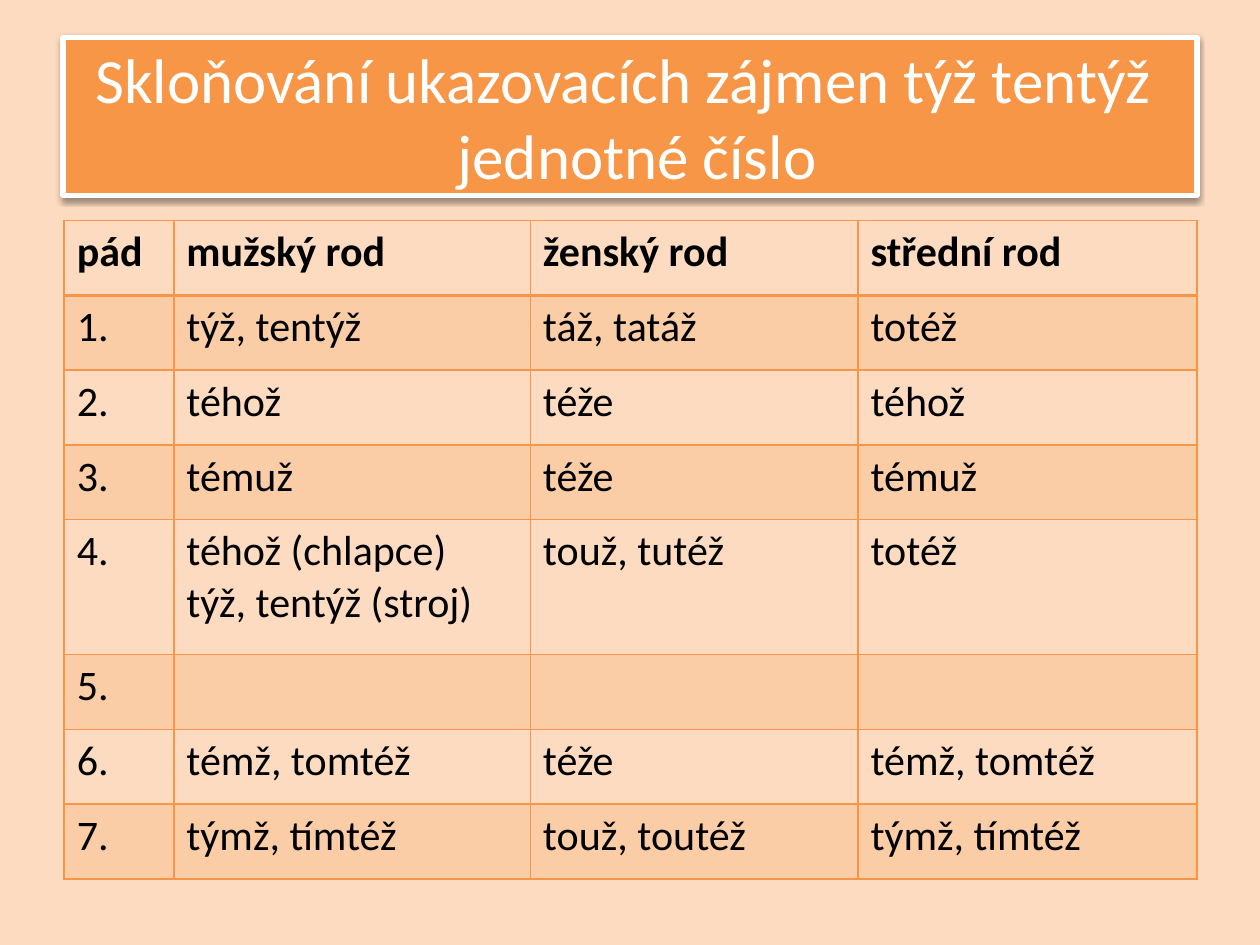
from dataclasses import dataclass

from lxml.etree import SubElement
from pptx import Presentation
from pptx.dml.color import RGBColor
from pptx.enum.text import MSO_ANCHOR, MSO_AUTO_SIZE, PP_ALIGN
from pptx.oxml.ns import qn
from pptx.util import Inches, Pt


@dataclass(frozen=True)
class Theme:
    font: str = "Calibri"
    title_size: int = 36
    table_size: int = 24
    background: str = "FCDBC0"
    accent: str = "F79646"
    light: str = "FFFFFF"
    dark: str = "000000"
    band_alpha: int = 20
    shadow_alpha: int = 38
    frame_width: float = 3
    border_width: float = 1
    header_border_width: float = 2


def add_color(parent, color, alpha=100):
    element = SubElement(parent, qn("a:srgbClr"), val=color)
    SubElement(element, qn("a:alpha"), val=str(alpha * 1000))


class SlideBuilder:
    GRID_COLUMNS = 100
    GRID_ROWS = 75

    def __init__(self, presentation, theme):
        self.theme = theme
        self.column = presentation.slide_width / self.GRID_COLUMNS
        self.row = presentation.slide_height / self.GRID_ROWS
        self.slide = presentation.slides.add_slide(presentation.slide_layouts[5])
        fill = self.slide.background.fill
        fill.solid()
        fill.fore_color.rgb = RGBColor.from_string(theme.background)

    def across(self, columns):
        return round(columns * self.column)

    def down(self, rows):
        return round(rows * self.row)

    def format_text(self, text_frame, size, color, bold=False):
        for paragraph in text_frame.paragraphs:
            for run in paragraph.runs:
                run.font.name = self.theme.font
                run.font.size = Pt(size)
                run.font.bold = bold
                run.font.color.rgb = RGBColor.from_string(color)

    def add_title(self, text, left, top, width, height):
        shape = self.slide.shapes.title
        shape.left, shape.top = self.across(left), self.down(top)
        shape.width, shape.height = self.across(width), self.down(height)
        shape.fill.solid()
        shape.fill.fore_color.rgb = RGBColor.from_string(self.theme.accent)
        shape.line.color.rgb = RGBColor.from_string(self.theme.light)
        shape.line.width = Pt(self.theme.frame_width)
        self.add_shadow(shape)
        text_frame = shape.text_frame
        text_frame.text = text
        text_frame.word_wrap = True
        text_frame.auto_size = MSO_AUTO_SIZE.NONE
        text_frame.vertical_anchor = MSO_ANCHOR.MIDDLE
        text_frame.paragraphs[0].alignment = PP_ALIGN.CENTER
        self.format_text(text_frame, self.theme.title_size, self.theme.light)

    def add_shadow(self, shape):
        effects = SubElement(shape.element.spPr, qn("a:effectLst"))
        shadow = SubElement(effects, qn("a:outerShdw"), blurRad=str(Pt(3.1)),
                            dist=str(Pt(1.6)), dir="5400000", rotWithShape="0")
        add_color(shadow, self.theme.dark, self.theme.shadow_alpha)

    def add_table(self, rows, left, top, widths, heights):
        frame = self.slide.shapes.add_table(
            len(rows), len(widths), self.across(left), self.down(top),
            self.across(sum(widths)), self.down(sum(heights)))
        table = frame.table
        table.horz_banding = False
        for column, width in zip(table.columns, widths):
            column.width = self.across(width)
        for row, height in zip(table.rows, heights):
            row.height = self.down(height)
        for row_index, row in enumerate(rows):
            for column_index, text in enumerate(row):
                cell = table.cell(row_index, column_index)
                cell.text_frame.text = text
                self.format_text(cell.text_frame, self.theme.table_size,
                                 self.theme.dark, bold=row_index == 0)
                self.style_cell(cell, row_index)

    def style_cell(self, cell, row_index):
        thin, thick = self.theme.border_width, self.theme.header_border_width
        widths = {
            "a:lnL": thin,
            "a:lnR": thin,
            "a:lnT": thick if row_index == 1 else thin,
            "a:lnB": thick if row_index == 0 else thin,
        }
        properties = cell._tc.get_or_add_tcPr()
        for side, width in widths.items():
            border = SubElement(properties, qn(side), w=str(Pt(width)))
            add_color(SubElement(border, qn("a:solidFill")), self.theme.accent)
        if row_index % 2:
            add_color(SubElement(properties, qn("a:solidFill")),
                      self.theme.accent, self.theme.band_alpha)
        else:
            SubElement(properties, qn("a:noFill"))


DECLENSION = [
    ("pád", "mužský rod", "ženský rod", "střední rod"),
    ("1.", "týž, tentýž", "táž, tatáž", "totéž"),
    ("2.", "téhož", "téže", "téhož"),
    ("3.", "témuž", "téže", "témuž"),
    ("4.", "téhož (chlapce)\ntýž, tentýž (stroj)", "touž, tutéž", "totéž"),
    ("5.", "", "", ""),
    ("6.", "témž, tomtéž", "téže", "témž, tomtéž"),
    ("7.", "týmž, tímtéž", "touž, toutéž", "týmž, tímtéž"),
]


def main():
    presentation = Presentation()
    presentation.slide_width = Inches(10)
    presentation.slide_height = Inches(7.5)
    builder = SlideBuilder(presentation, Theme())
    builder.add_title("Skloňování ukazovacích zájmen týž tentýž \v jednotné číslo",
                      5, 3, 90, 12.5)
    heights = [10.7 if "\n" in row[1] else 5.94 for row in DECLENSION]
    builder.add_table(DECLENSION, 5.1, 17.5, [8.7, 28.3, 26, 26.9], heights)
    presentation.save("out.pptx")


if __name__ == "__main__":
    main()
